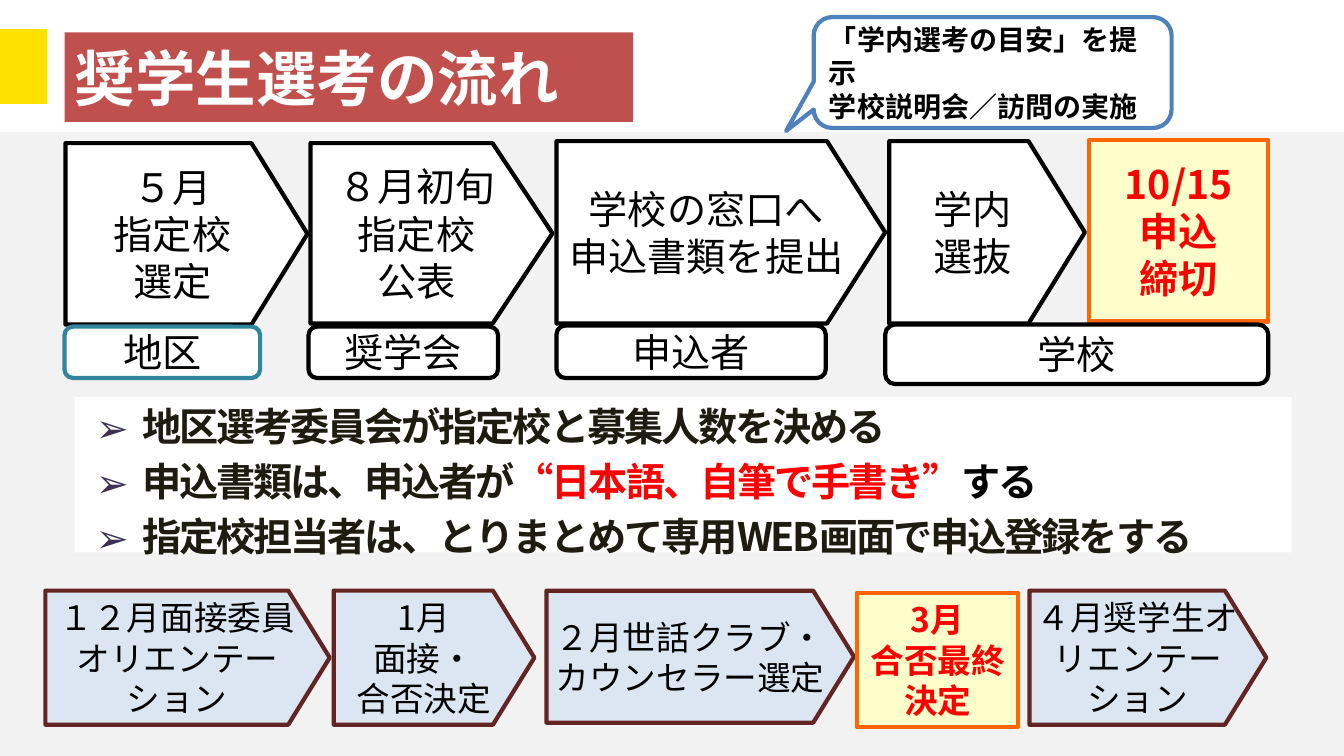
import pptx
import pptx.dml.color
import pptx.enum.shapes
import pptx.enum.text
import pptx.oxml
import pptx.oxml.ns
import pptx.util

Inches = pptx.util.Inches
Pt = pptx.util.Pt
SHAPE = pptx.enum.shapes.MSO_SHAPE
ALIGN = pptx.enum.text.PP_ALIGN
FONT = "Noto Sans CJK JP"
TIGHT = (0.07, 0.01, 0.07, 0.01)
NORMAL = (0.1, 0.05, 0.1, 0.05)


def color(value):
    return pptx.dml.color.RGBColor.from_string(value)


class FlowSlide:
    """Draw the styled elements of the selection flow on one slide."""

    def __init__(self, presentation):
        self.slide = presentation.slides.add_slide(presentation.slide_layouts[1])

    def format_run(self, run, size, font_color, bold):
        run.font.size = Pt(size)
        run.font.name = FONT
        run.font.bold = bold
        run.font.color.rgb = color(font_color)
        east_asian = pptx.oxml.parse_xml(
            f'<a:ea {pptx.oxml.ns.nsdecls("a")} typeface="{FONT}"/>')
        run.font._element.find(pptx.oxml.ns.qn("a:latin")).addnext(east_asian)

    def label(self, shape, text, size, font_color="000000", bold=False,
              align=ALIGN.CENTER, insets=NORMAL):
        frame = shape.text_frame
        frame.text = text
        frame.word_wrap = True
        frame.auto_size = pptx.enum.text.MSO_AUTO_SIZE.NONE
        frame.vertical_anchor = pptx.enum.text.MSO_ANCHOR.MIDDLE
        (frame.margin_left, frame.margin_top,
         frame.margin_right, frame.margin_bottom) = map(Inches, insets)
        for paragraph in frame.paragraphs:
            paragraph.alignment = align
            for run in paragraph.runs:
                self.format_run(run, size, font_color, bold)

    def shape(self, kind, box, fill, line=None, adjustments=()):
        shape = self.slide.shapes.add_shape(kind, *map(Inches, box))
        shape.shadow.inherit = False
        shape.fill.solid()
        shape.fill.fore_color.rgb = color(fill)
        if line:
            shape.line.color.rgb = color(line)
            shape.line.width = Pt(3)
        else:
            shape.line.fill.background()
        for index, value in enumerate(adjustments):
            shape.adjustments[index] = value
        return shape

    def step(self, box, text, size, fill, line, point=0.309):
        shape = self.shape(SHAPE.PENTAGON, box, fill, line, [point])
        self.label(shape, text, size, insets=TIGHT)

    def deadline(self, box, text, size):
        shape = self.shape(SHAPE.RECTANGLE, box, "FFFFCC", "FF6600")
        self.label(shape, text, size, "FF0000", True, insets=TIGHT)

    def actor(self, box, text, line="000000"):
        shape = self.shape(SHAPE.ROUNDED_RECTANGLE, box, "FFFFFF", line)
        self.label(shape, text, 28)

    def callout(self, box, text):
        shape = self.shape(SHAPE.ROUNDED_RECTANGULAR_CALLOUT, box, "FFFFFF",
                           "4F81BD", [-0.577, 0.527, 0.167])
        self.label(shape, text, 20, bold=True, align=ALIGN.LEFT)

    def place(self, shape, box, fill):
        shape.left, shape.top, shape.width, shape.height = map(Inches, box)
        shape.fill.solid()
        shape.fill.fore_color.rgb = color(fill)
        shape._element.getparent().append(shape._element)

    def title(self, box, text):
        shape = self.slide.shapes.title
        self.place(shape, box, "C0504D")
        self.label(shape, text, 43.2, "FFFFFF", True, ALIGN.LEFT)

    def bullets(self, box, items):
        shape = self.slide.placeholders[1]
        self.place(shape, box, "FFFFFF")
        frame = shape.text_frame
        frame.text = "\n".join([""] * len(items))
        frame.auto_size = pptx.enum.text.MSO_AUTO_SIZE.NONE
        for paragraph, pieces in zip(frame.paragraphs, items):
            paragraph.space_before = Pt(5.6)
            properties = paragraph._element.get_or_add_pPr()
            properties.set("marL", str(Inches(0.57)))
            properties.set("indent", str(Inches(-0.46)))
            for tag, attributes, content in (
                    ("buClr", "", '<a:srgbClr val="403152"/>'),
                    ("buFont", f'typeface="{FONT}"', ""),
                    ("buChar", 'char="➢"', "")):
                properties.append(pptx.oxml.parse_xml(
                    f'<a:{tag} {pptx.oxml.ns.nsdecls("a")} {attributes}>'
                    f'{content}</a:{tag}>'))
            for text, font_color in pieces:
                run = paragraph.add_run()
                run.text = text
                self.format_run(run, 28, font_color, True)
                run.font._element.set("spc", "-150")


def main():
    presentation = pptx.Presentation()
    presentation.slide_width = Inches(13.33)
    presentation.slide_height = Inches(7.5)
    flow = FlowSlide(presentation)

    flow.shape(SHAPE.RECTANGLE, (0, 0.29, 0.47, 0.74), "FFE101")
    flow.shape(SHAPE.RECTANGLE, (0, 1.31, 13.33, 6.19), "F2F2F2")
    flow.title((0.64, 0.32, 5.64, 0.89), "奨学生選考の流れ")
    dark = "1E1C11"
    flow.bullets((0.74, 3.94, 12.07, 1.54), [
        [("地区選考委員会が指定校と募集人数を決める", dark)],
        [("申込書類は、申込者が", dark), ("“日本語、自筆で手書き”", "FF0000"),
         ("する", "000000")],
        [("指定校担当者は、とりまとめて専用WEB画面で申込登録をする", dark)],
    ])

    for box, text, point in [
        ((8.82, 1.4, 1.94, 1.81), "学内\n選抜", 0.309),
        ((5.52, 1.4, 3.26, 1.81), "学校の窓口へ\n申込書類を提出", 0.319),
        ((0.65, 1.42, 2.4, 1.8), "５月\n指定校\n選定", 0.309),
        ((3.08, 1.42, 2.4, 1.79), "８月初旬\n指定校\n公表", 0.332),
    ]:
        flow.step(box, text, 28, "FFFFFF", "000000", point)
    flow.deadline((10.8, 1.39, 1.78, 1.8), "10/15\n申込\n締切", 28)

    flow.actor((0.64, 3.24, 1.94, 0.51), "地区", "31859C")
    flow.actor((3.06, 3.24, 1.88, 0.51), "奨学会")
    flow.actor((5.52, 3.23, 2.67, 0.52), "申込者")
    flow.actor((8.78, 3.22, 3.8, 0.59), "学校")

    for left, width, height, text in [
        (0.45, 2.82, 1.33, "１２月面接委員オリエンテーション"),
        (3.31, 1.99, 1.33, "1月\n面接・\n合否決定"),
        (5.42, 3.05, 1.31, "２月世話クラブ・\nカウンセラー選定"),
        (10.21, 2.35, 1.33, "４月奨学生オリエンテーション"),
    ]:
        flow.step((left, 5.86, width, height), text, 24, "DCE6F2", "632523")
    flow.deadline((8.5, 5.88, 1.6, 1.33), "3月\n合否最終決定", 24)
    flow.callout((8.07, 0.17, 3.55, 1.1), "「学内選考の目安」を提示\n学校説明会／訪問の実施")

    presentation.save("out.pptx")


if __name__ == "__main__":
    main()
